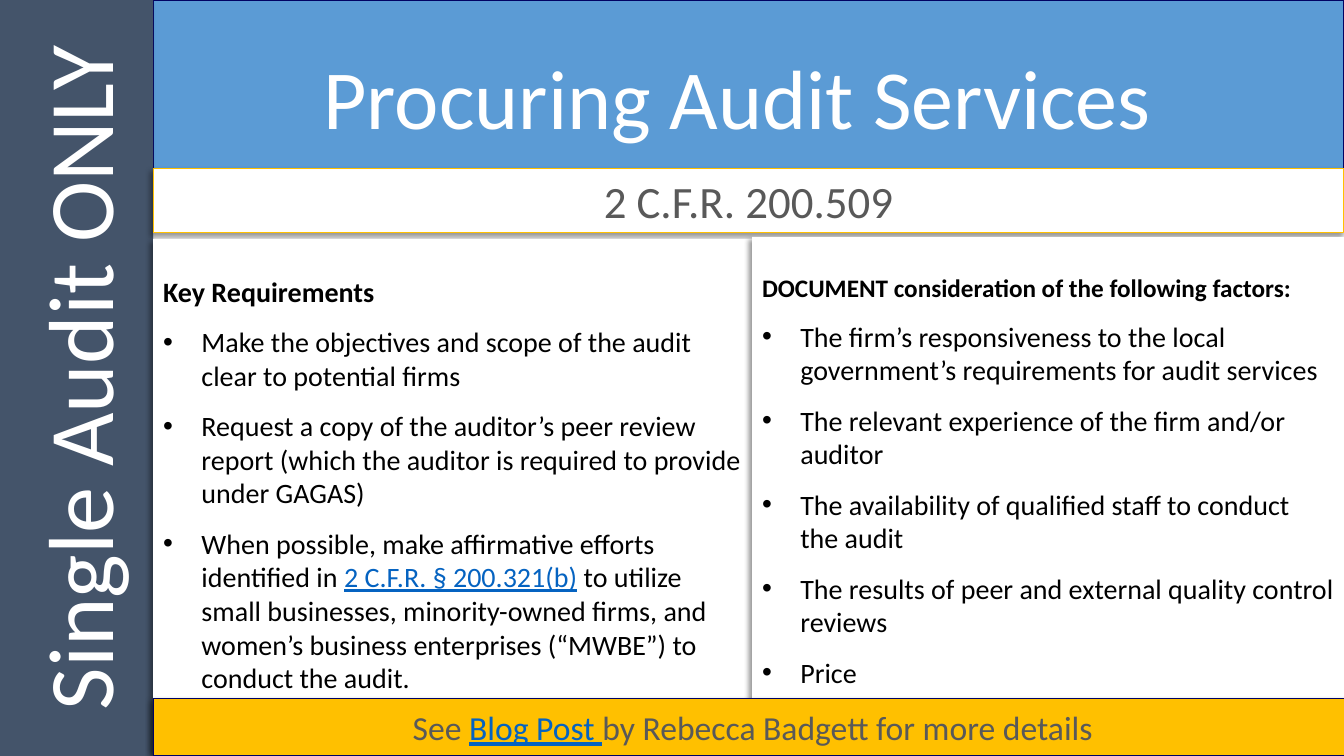
from lxml.etree import SubElement
from pptx import Presentation
from pptx.dml.color import RGBColor
from pptx.enum.shapes import MSO_SHAPE
from pptx.enum.text import MSO_ANCHOR, MSO_AUTO_SIZE, PP_ALIGN
from pptx.oxml.ns import qn
from pptx.util import Inches, Pt

WHITE = RGBColor(0xFF, 0xFF, 0xFF)
BLACK = RGBColor(0, 0, 0)
BLUE = RGBColor(0x5B, 0x9B, 0xD5)
SLATE = RGBColor(0x44, 0x54, 0x6A)
GOLD = RGBColor(0xFF, 0xC0, 0x00)
NAVY = RGBColor(0x01, 0x02, 0x63)
GREY = RGBColor(0x59, 0x59, 0x59)
LINK = RGBColor(0x05, 0x63, 0xC1)

WIDTH, HEIGHT = 13.33, 7.5
SIDE = 1.52
MAIN = WIDTH - SIDE
SPLIT = 7.46
PANEL_HEIGHT = 5.08

REQUIREMENTS = [
    ["Make the objectives and scope of the audit clear to potential firms"],
    ["Request a copy of the auditor’s peer review report "
     "(which the auditor is required to provide under GAGAS)"],
    ["When possible, make affirmative efforts identified in ",
     ("2 C.F.R. § 200.321(b)", LINK),
     " to utilize small businesses, minority-owned firms, and women’s "
     "business enterprises (“MWBE”) to conduct the audit."],
]
FACTORS = [
    ["The firm’s responsiveness to the local government’s requirements for audit services"],
    ["The relevant experience of the firm and/or auditor"],
    ["The availability of qualified staff to conduct the audit"],
    ["The results of peer and external quality control reviews"],
    ["Price"],
]


def add_box(s, box, fill, line=None, line_width=1, shadow=True):
    sp = s.shapes.add_shape(MSO_SHAPE.RECTANGLE, *map(Inches, box))
    sp.fill.solid()
    sp.fill.fore_color.rgb = fill
    if line is None:
        sp.line.fill.background()
    else:
        sp.line.color.rgb = line
        sp.line.width = Pt(line_width)
    sp.shadow.inherit = False
    if shadow:
        effects = sp.element.spPr.find(qn("a:effectLst"))
        outer = SubElement(effects, qn("a:outerShdw"), blurRad=str(Pt(4)), dist=str(Pt(3)),
                           dir="8100000", algn="tr", rotWithShape="0")
        color = SubElement(outer, qn("a:srgbClr"), val="000000")
        SubElement(color, qn("a:alpha"), val="40000")
    return sp


def write(p, parts, size, color, bold=False, align=PP_ALIGN.LEFT, bullet=False):
    if bullet:
        pPr = p._p.get_or_add_pPr()
        pPr.set("marL", str(Inches(0.38)))
        pPr.set("indent", str(Inches(-0.38)))
        SubElement(pPr, qn("a:buFont"), typeface="Arial")
        SubElement(pPr, qn("a:buChar"), char="•")
        p.space_before = Pt(12)
    p.alignment = align
    for part in parts:
        text, shade = (part, color) if isinstance(part, str) else part
        r = p.add_run()
        r.text = text
        r.font.name = "Calibri"
        r.font.size = Pt(size)
        r.font.bold = bold
        r.font.color.rgb = shade
        r.font.underline = shade == LINK


def add_banner(s, box, parts, size, color, fill, anchor=MSO_ANCHOR.MIDDLE, **style):
    sp = add_box(s, box, fill, **style)
    tf = sp.text_frame
    tf.word_wrap = True
    tf.vertical_anchor = anchor
    write(tf.paragraphs[0], parts, size, color, align=PP_ALIGN.CENTER)
    return sp


def add_header(s, box):
    left, top, width, height = box
    band = add_box(s, box, BLUE, line=NAVY, shadow=False)
    title = s.shapes.title
    title.element.addprevious(band.element)
    title.left, title.top = Inches(left + 0.09), Inches(top)
    title.width, title.height = Inches(width - 0.4), Inches(height + 0.13)
    tf = title.text_frame
    tf.auto_size = MSO_AUTO_SIZE.NONE
    tf.vertical_anchor = MSO_ANCHOR.MIDDLE
    p = tf.paragraphs[0]
    p.line_spacing = 0.9
    write(p, ["Procuring Audit Services"], 60, WHITE, align=PP_ALIGN.CENTER)


def add_sidebar(s, box):
    left, top, width, height = box
    turned = (left + (width - height) / 2, top + (height - width) / 2, height, width)
    sp = add_banner(s, turned, ["Single Audit ONLY"], 66, WHITE, SLATE)
    sp.rotation = 270


def add_panel(s, box, heading, heading_size, items):
    tf = add_box(s, box, WHITE).text_frame
    tf.word_wrap = True
    tf.vertical_anchor = MSO_ANCHOR.TOP
    tf.margin_top = Inches(0.35)
    write(tf.paragraphs[0], [heading], heading_size, BLACK, bold=True)
    for item in items:
        write(tf.add_paragraph(), item, 20, BLACK, bullet=True)


def main():
    prs = Presentation()
    prs.slide_width, prs.slide_height = Inches(WIDTH), Inches(HEIGHT)
    s = prs.slides.add_slide(prs.slide_layouts[5])
    add_header(s, (SIDE, 0, MAIN, 1.9))
    add_sidebar(s, (0, 0, SIDE, HEIGHT))
    add_banner(s, (SIDE, 1.67, MAIN, 0.64), ["2 C.F.R. 200.509"], 32, GREY, WHITE,
               anchor=MSO_ANCHOR.TOP, line=GOLD, line_width=0.75)
    add_panel(s, (SIDE, 2.37, SPLIT - SIDE, PANEL_HEIGHT),
              "Key Requirements", 20, REQUIREMENTS)
    add_panel(s, (SPLIT, 2.35, WIDTH - SPLIT, PANEL_HEIGHT),
              "DOCUMENT consideration of the following factors:", 18, FACTORS)
    add_banner(s, (SIDE, 6.93, MAIN + 0.08, HEIGHT - 6.93),
               ["See ", ("Blog Post ", LINK), "by Rebecca Badgett for more details"],
               24, GREY, GOLD, line=NAVY)
    prs.save("out.pptx")


if __name__ == "__main__":
    main()
